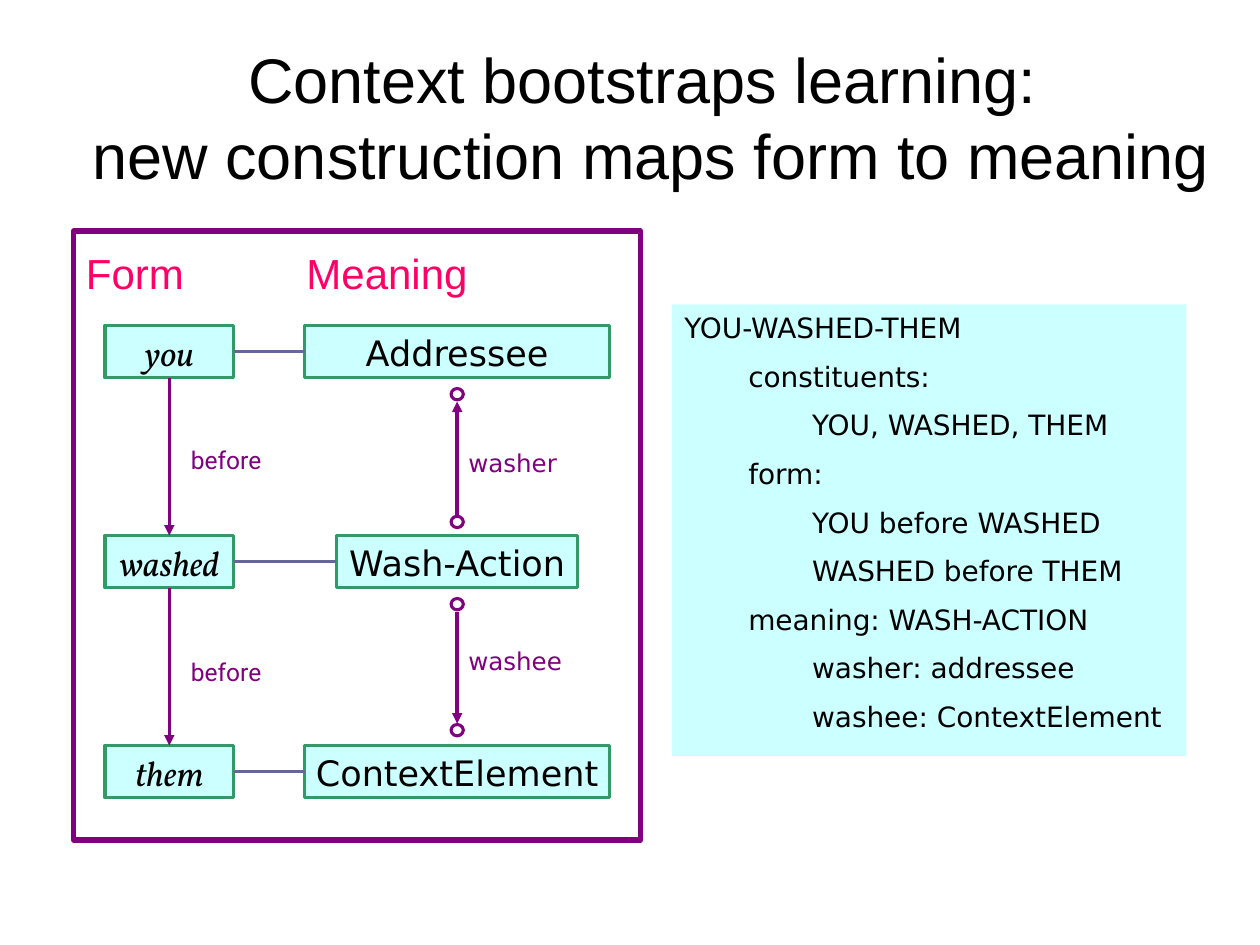
from lxml import etree
from pptx import Presentation
from pptx import util as u
from pptx.dml.color import RGBColor
from pptx.enum import shapes, text
from pptx.oxml.ns import qn

Pt = u.Pt
COLORS = {"black": "000000", "pink": "FF0066", "purple": "800080", "green": "339966",
          "slate": "666699", "aqua": "CCFFFF", "white": "FFFFFF"}
TITLE = "Context bootstraps learning: \vnew construction maps form to meaning"
HEADINGS = [("Meaning", 168, 168), ("Form", 42, 120)]
ROWS = [("you", "Addressee", 174), ("washed", "Wash-Action", 138), ("them", "ContextElement", 174)]
BEFORE_TOPS = [250.5, 372]
ROLES = [("washer", 252.5, 294.5, 229.5), ("washee", 365.5, 350, 413.5)]
RING_TOPS = [222, 295, 342, 414]
CONSTRUCTION = [(0, "YOU-WASHED-THEM"), (1, "constituents:"), (2, "YOU, WASHED, THEM"),
                (1, "form:"), (2, "YOU before WASHED"), (2, "WASHED before THEM"),
                (1, "meaning: WASH-ACTION"), (2, "washer: addressee"),
                (2, "washee: ContextElement")]
FORM_LEFT, FORM_WIDTH, MEANING_CENTER = 60, 73.5, 261.25
ROW_TOP, ROW_STEP, ROW_HEIGHT = 186, 120, 30
RING_WIDTH, RING_HEIGHT = 7, 6.5
INDENT = 36.5


def color(name):
    return RGBColor.from_string(COLORS[name])


def style_text(frame, size, font, ink="black", align=None, italic=None):
    for para in frame.paragraphs:
        para.alignment = align
        for span in para.runs:
            span.font.size, span.font.name, span.font.italic = Pt(size), font, italic
            span.font.color.rgb = color(ink)


def set_margins(frame, inset):
    frame.margin_left = frame.margin_right = Pt(inset)
    frame.margin_top = frame.margin_bottom = Pt(inset)


def add_label(page, words, left, top, width, height, size, font, ink, inset=None):
    frame = page.shapes.add_textbox(Pt(left), Pt(top), Pt(width), Pt(height)).text_frame
    frame.word_wrap = True
    frame.text = words
    if inset:
        set_margins(frame, inset)
    style_text(frame, size, font, ink)


def add_block(page, kind, left, top, width, height, fill=None, line=None, weight=1.75):
    box = page.shapes.add_shape(kind, Pt(left), Pt(top), Pt(width), Pt(height))
    box.shadow.inherit = False
    if fill:
        box.fill.solid()
        box.fill.fore_color.rgb = color(fill)
    else:
        box.fill.background()
    if line:
        box.line.color.rgb = color(line)
        box.line.width = Pt(weight)
    else:
        box.line.fill.background()
    return box


def add_node(page, words, left, top, width, font, italic=None):
    box = add_block(page, shapes.MSO_SHAPE.RECTANGLE, left, top, width, ROW_HEIGHT, "aqua", "green")
    frame = box.text_frame
    frame.text = words
    frame.vertical_anchor = text.MSO_ANCHOR.TOP
    set_margins(frame, 3.6)
    style_text(frame, 20, font, align=text.PP_ALIGN.CENTER, italic=italic)
    return box


def add_line(page, ink, weight, x=0, start=0, end=0, arrow=True):
    line = page.shapes.add_connector(shapes.MSO_CONNECTOR.STRAIGHT, Pt(x), Pt(start), Pt(x), Pt(end))
    line.line.color.rgb = color(ink)
    line.line.width = Pt(weight)
    if arrow:
        etree.SubElement(line.line._get_or_add_ln(), qn("a:tailEnd"), type="triangle")
    etree.SubElement(line._element.spPr, qn("a:effectLst"))
    return line


def join(line, first, first_side, second, second_side):
    line.begin_connect(first, first_side)
    line.end_connect(second, second_side)


def add_diagram(page):
    for words, left, width in HEADINGS:
        add_label(page, words, left, 138, width, 36, 24, "Arial", "pink")
    forms = []
    for row, (form, meaning, width) in enumerate(ROWS):
        top = ROW_TOP + row * ROW_STEP
        form_box = add_node(page, form, FORM_LEFT, top, FORM_WIDTH, "Vollkorn", True)
        meaning_box = add_node(page, meaning, MEANING_CENTER - width / 2, top, width, "DejaVu Sans")
        join(add_line(page, "slate", 1.5, arrow=False), form_box, 3, meaning_box, 1)
        forms.append(form_box)
    for upper, lower, top in zip(forms, forms[1:], BEFORE_TOPS):
        join(add_line(page, "purple", 1.75), upper, 2, lower, 0)
        add_label(page, "before", 102, top, 60, 24, 14, "Roboto", "purple")
    for role, top, start, end in ROLES:
        add_line(page, "purple", 2, MEANING_CENTER, start, end)
        add_label(page, role, 264, top, 84, 21, 14, "DejaVu Sans", "purple", 3.6)
    for top in RING_TOPS:
        add_block(page, shapes.MSO_SHAPE.OVAL, MEANING_CENTER - RING_WIDTH / 2, top,
                  RING_WIDTH, RING_HEIGHT, "white", "purple")
    add_block(page, shapes.MSO_SHAPE.RECTANGLE, 42, 132, 324, 348, line="purple", weight=3)


def add_construction(page):
    box = add_block(page, shapes.MSO_SHAPE.RECTANGLE, 384, 174, 294, 258, "aqua")
    frame = box.text_frame
    frame.vertical_anchor = text.MSO_ANCHOR.TOP
    frame.text = "\n".join(words for _, words in CONSTRUCTION)
    style_text(frame, 16, "DejaVu Sans", align=text.PP_ALIGN.LEFT)
    for row, (level, _) in enumerate(CONSTRUCTION):
        para = frame.paragraphs[row]
        para.space_before = Pt(8.6 if row else 0)
        para._p.get_or_add_pPr().set("marL", str(Pt(level * INDENT)))


def main():
    """Build the slide on how context bootstraps construction learning."""
    deck = Presentation()
    deck.slide_width, deck.slide_height = Pt(720), Pt(540)
    page = deck.slides.add_slide(deck.slide_layouts[5])
    title = page.shapes.title
    title.left, title.top, title.width, title.height = Pt(36), Pt(21.6), Pt(672), Pt(90)
    title.text_frame.text = TITLE
    title.text_frame.vertical_anchor = text.MSO_ANCHOR.MIDDLE
    title.text_frame.auto_size = text.MSO_AUTO_SIZE.NONE
    style_text(title.text_frame, 36, "Arial", align=text.PP_ALIGN.CENTER)
    add_diagram(page)
    add_construction(page)
    deck.save("out.pptx")


if __name__ == "__main__":
    main()
